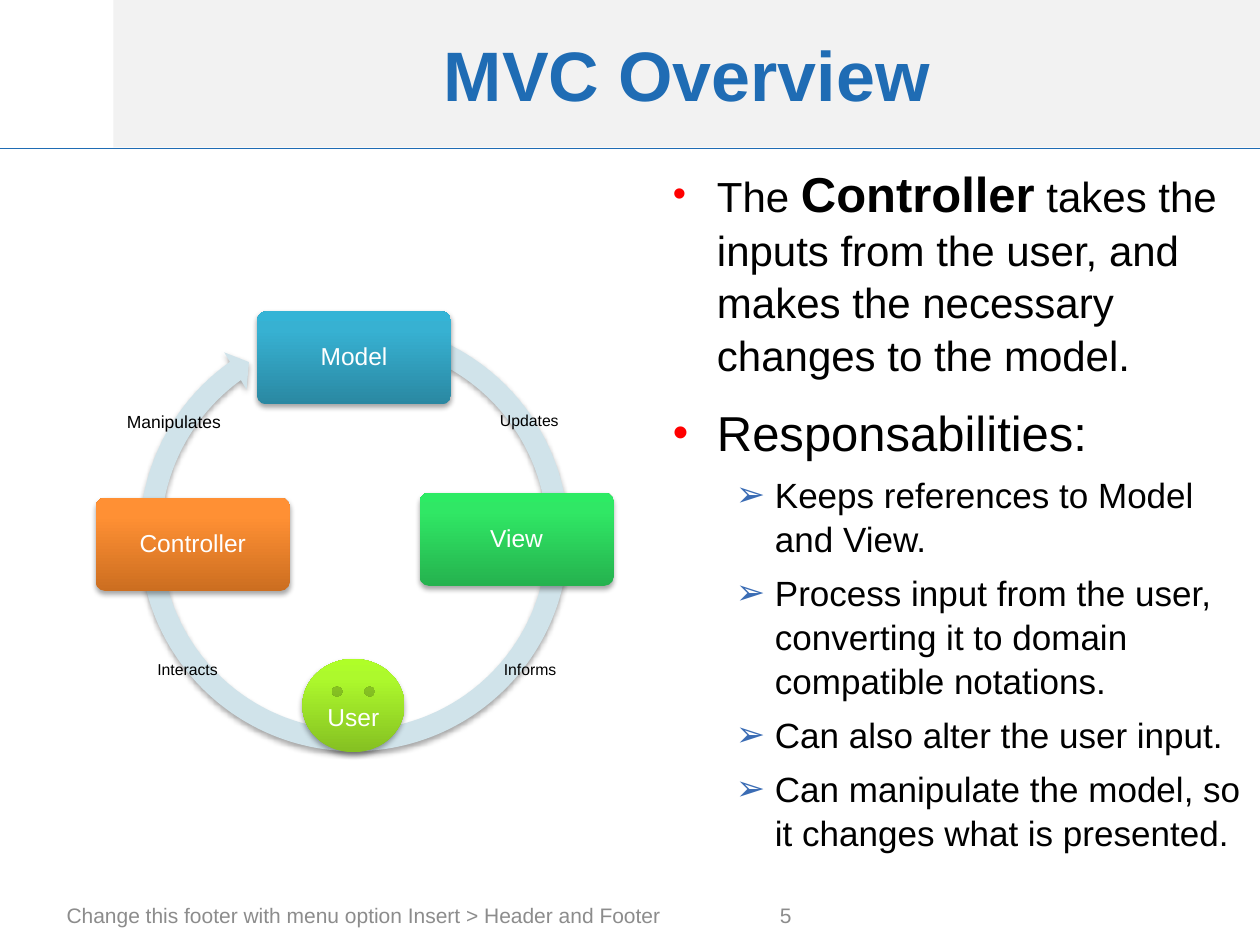
from copy import deepcopy
from typing import NamedTuple

from lxml import etree
from pptx import Presentation
from pptx.dml.color import RGBColor
from pptx.enum import shapes, text
from pptx.oxml.ns import qn
from pptx.util import Inches, Pt

BLUE = RGBColor(0x1F, 0x6C, 0xB4)
PALE = RGBColor(0xF2, 0xF2, 0xF2)
RING = RGBColor(0xD0, 0xE3, 0xEA)
GRAY = RGBColor(0x8C, 0x8C, 0x8C)
BLACK = RGBColor(0, 0, 0)
WHITE = RGBColor(255, 255, 255)
RED = RGBColor(0xFF, 0, 0)
ARROW = RGBColor(0x3A, 0x6C, 0xB4)

SHAPE = shapes.MSO_SHAPE
LEFT, CENTER, RIGHT = text.PP_ALIGN.LEFT, text.PP_ALIGN.CENTER, text.PP_ALIGN.RIGHT
TOP, MIDDLE = text.MSO_ANCHOR.TOP, text.MSO_ANCHOR.MIDDLE


class Box(NamedTuple):
    x: float
    y: float
    w: float
    h: float

    def inches(self) -> list:
        return [Inches(v) for v in self]

    def inset(self, dx: float, dy: float) -> "Box":
        return Box(self.x + dx, self.y + dy, self.w - 2 * dx, self.h - 2 * dy)


class Node(NamedTuple):
    name: str
    box: Box
    shades: tuple
    kind: int = SHAPE.ROUNDED_RECTANGLE
    inset: tuple = (0.03, 0.03)
    drop: float = 0  # extra top margin that lowers the name


class Label(NamedTuple):
    words: str
    box: Box
    size: int = 9
    align: int = LEFT


class Bullet(NamedTuple):
    char: str
    color: RGBColor
    scale: int
    margin: float
    hang: float
    before: int


DOT = Bullet("•", RED, 90, 0.35, 0.35, 12)
POINT = Bullet("➢", ARROW, 100, 0.81, 0.31, 6)

NODES = [
    Node("Model", Box(2.04, 2.47, 1.54, 0.74), ("2A88A2", "37B1D2", "34B4D6")),
    Node("View", Box(3.33, 3.91, 1.54, 0.74), ("25B24E", "30E765", "2DEB64")),
    Node("User", Box(2.4, 5.23, 0.81, 0.74), ("85C022", "ADF92C", "AFFE28"),
         SHAPE.SMILEY_FACE, (0.12, 0.11), 0.2),
    Node("Controller", Box(0.76, 3.95, 1.54, 0.74), ("CC6E20", "FF9034", "FF9136")),
]
LABELS = [
    Label("Updates", Box(3.87, 3.21, 0.7, 0.25)),
    Label("Informs", Box(3.9, 5.19, 0.63, 0.25)),
    Label("Interacts", Box(1.15, 5.19, 0.72, 0.25)),
    Label("Manipulates", Box(0.9, 3.21, 0.96, 0.25), 10, CENTER),
]
# Each item: bullet, level, size, runs as (words, bold size or None)
ITEMS = [
    (DOT, 0, 24, [("The ", None), ("Controller", 28),
                  (" takes the inputs from the user, and makes the necessary "
                   "changes to the model.", None)]),
    (DOT, 0, 28, [("Responsabilities:", None)]),
] + [(POINT, 1, 20, [(words, None)]) for words in (
    "Keeps references to Model and View.",
    "Process input from the user, converting it to domain compatible notations.",
    "Can also alter the user input.",
    "Can manipulate the model, so it changes what is presented.",
)]


def style(font, size: int, color: RGBColor, bold: bool = False) -> None:
    font.name, font.size, font.bold = "Arial", Pt(size), bold
    font.color.rgb = color


def write(parent, words: str, box: Box, size: int, color: RGBColor,
          align: int = LEFT, anchor: int = TOP, wrap: bool = True):
    frame = parent.add_textbox(*box.inches()).text_frame
    frame.word_wrap, frame.vertical_anchor = wrap, anchor
    par = frame.paragraphs[0]
    par.text, par.alignment = words, align
    style(par.font, size, color)
    return frame


def add_shade(shape) -> None:
    """Give the shape a soft shadow straight below it."""
    shape.shadow.inherit = False
    effects = shape._element.spPr.find(qn("a:effectLst"))
    outer = etree.SubElement(effects, qn("a:outerShdw"), blurRad=str(Pt(3.1)),
                             dist=str(Pt(1.8)), dir="5400000", rotWithShape="0")
    color = etree.SubElement(outer, qn("a:srgbClr"), val="000000")
    etree.SubElement(color, qn("a:alpha"), val="35000")


def draw_ring(group) -> None:
    ring = group.shapes.add_shape(SHAPE.CIRCULAR_ARROW, *Box(1.02, 2.47, 3.58, 3.58).inches())
    for i, value in enumerate((0.047, 2.729, 140.65, 172.467, 0.048)):
        ring.adjustments[i] = value
    ring.fill.solid()
    ring.fill.fore_color.rgb = RING
    ring.line.fill.background()
    add_shade(ring)


def draw_node(group, node: Node) -> None:
    shape = group.shapes.add_shape(node.kind, *node.box.inches())
    if node.kind == SHAPE.ROUNDED_RECTANGLE:
        shape.adjustments[0] = 0.1
    shape.fill.gradient()
    shape.fill.gradient_angle = 90
    stops = shape._element.spPr.find(".//" + qn("a:gsLst"))
    stops.append(deepcopy(stops[0]))
    for stop, place, shade in zip(shape.fill.gradient_stops, (0, 0.8, 1), node.shades):
        stop.position = place
        stop.color.rgb = RGBColor.from_string(shade)
    shape.line.fill.background()
    add_shade(shape)

    frame = write(group.shapes, node.name, node.box.inset(*node.inset), 14, WHITE,
                  CENTER, MIDDLE)
    frame.margin_left = frame.margin_right = frame.margin_bottom = Inches(0.06)
    frame.margin_top = Inches(0.06 + node.drop)
    frame.paragraphs[0].line_spacing = 0.9


def set_bullet(par, bullet: Bullet) -> None:
    props = par._p.get_or_add_pPr()
    props.set("marL", str(Inches(bullet.margin)))
    props.set("indent", str(-Inches(bullet.hang)))
    color = etree.SubElement(props, qn("a:buClr"))
    etree.SubElement(color, qn("a:srgbClr"), val=str(bullet.color))
    etree.SubElement(props, qn("a:buSzPct"), val=str(bullet.scale * 1000))
    etree.SubElement(props, qn("a:buFont"), typeface="Arial")
    etree.SubElement(props, qn("a:buChar"), char=bullet.char)


def place(holder, box: Box):
    holder.left, holder.top, holder.width, holder.height = box.inches()
    holder.text_frame.auto_size = text.MSO_AUTO_SIZE.NONE
    return holder.text_frame


def fill_title(title) -> None:
    frame = place(title, Box(0.9, 0, 9.1, 1.17))
    title.fill.solid()
    title.fill.fore_color.rgb = PALE
    frame.vertical_anchor = MIDDLE
    par = frame.paragraphs[0]
    par.text, par.alignment = "MVC Overview", CENTER
    style(par.font, 40, BLUE, True)


def fill_body(body) -> None:
    frame = place(body, Box(5.24, 1.23, 4.76, 5.83))
    for i, (bullet, level, size, runs) in enumerate(ITEMS):
        par = frame.add_paragraph() if i else frame.paragraphs[0]
        par.level = level
        set_bullet(par, bullet)
        par.space_before = Pt(bullet.before if i else 0)
        par.line_spacing = 1.04
        style(par.font, size, BLACK)
        for words, big in runs:
            run = par.add_run()
            run.text = words
            if big:
                run.font.size, run.font.bold = Pt(big), True


def main() -> None:
    deck = Presentation()
    deck.slide_width, deck.slide_height = Inches(10), Inches(7.5)
    slide = deck.slides.add_slide(deck.slide_layouts[1])
    fill_title(slide.shapes.title)
    fill_body(slide.placeholders[1])

    rule = slide.shapes.add_connector(shapes.MSO_CONNECTOR.STRAIGHT, 0, Inches(1.18),
                                      Inches(10), Inches(1.18))
    rule.line.color.rgb, rule.line.width = BLUE, Pt(0.75)
    etree.SubElement(rule._element.spPr, qn("a:effectLst"))

    cycle = slide.shapes.add_group_shape()
    draw_ring(cycle)
    for node in NODES:
        draw_node(cycle, node)
    for label in LABELS:
        write(slide.shapes, label.words, label.box, label.size, BLACK, label.align, wrap=False)

    write(slide.shapes, "Change this footer with menu option Insert > Header and Footer",
          Box(0.43, 7.06, 5.26, 0.4), 12, GRAY, anchor=MIDDLE)
    write(slide.shapes, "5", Box(5.69, 7.06, 0.69, 0.4), 12, GRAY, RIGHT, MIDDLE)
    deck.save("out.pptx")


if __name__ == "__main__":
    main()
